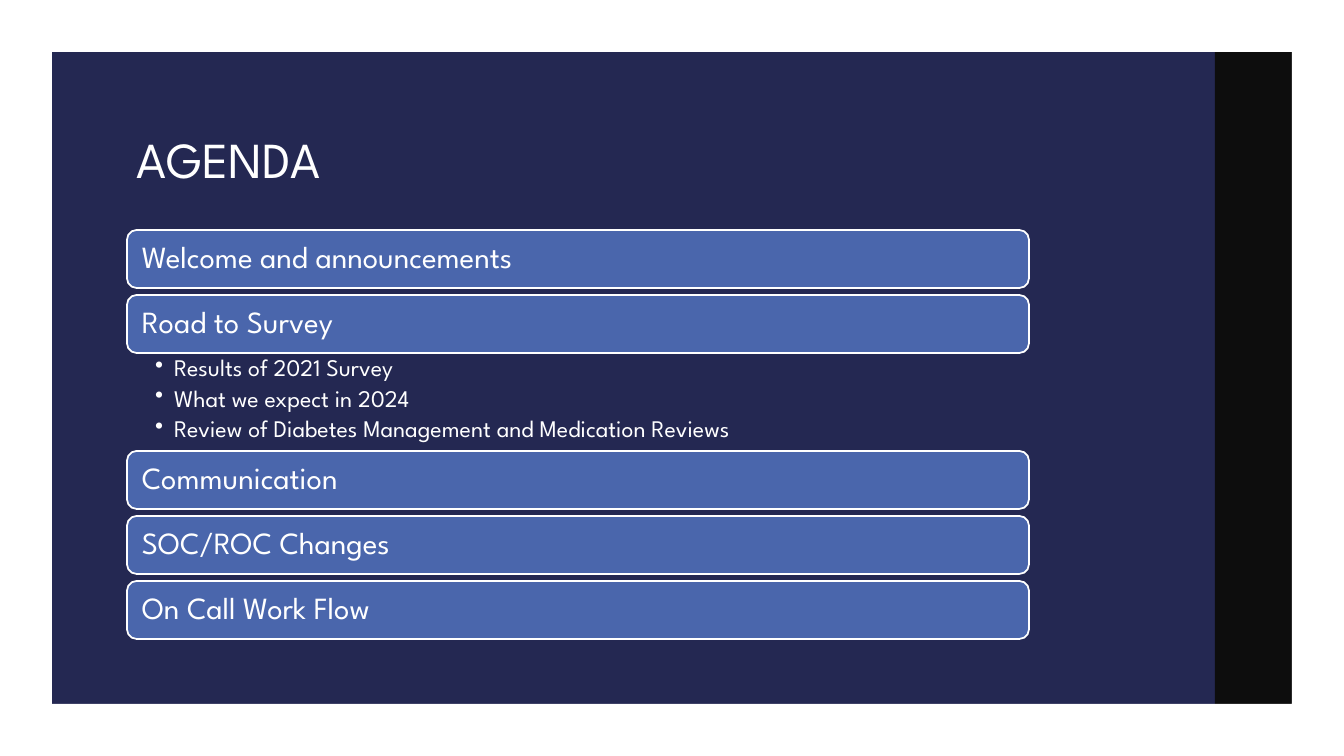
from lxml.etree import SubElement
from pptx import Presentation
from pptx.dml.color import RGBColor
from pptx.enum.shapes import MSO_SHAPE as Preset
from pptx.enum.text import MSO_ANCHOR as Anchor, MSO_AUTO_SIZE as AutoSize, PP_ALIGN as Align
from pptx.oxml.ns import qn
from pptx.util import Pt

EMU_PER_PX = 914400 / 100.8
COLORS = {"navy": "242852", "black": "0D0D0D", "white": "FFFFFF", "blue": "4A66AC"}
FONT = "League Spartan"
SLIDE_W, SLIDE_H = 1344, 756
BORDER = 52
LIST_LEFT, LIST_TOP, LIST_W = 127, 230, 902
BAR_H, BAR_GAP, DETAILS_H = 58, 7, 98
BULLET_INDENT = 19

AGENDA = [
    ("Welcome and announcements", []),
    ("Road to Survey", [
        "Results of 2021 Survey",
        "What we expect in 2024",
        "Review of Diabetes Management and Medication Reviews",
    ]),
    ("Communication", []),
    ("SOC/ROC Changes", []),
    ("On Call Work Flow", []),
]


def px(length):
    return round(length * EMU_PER_PX)


def color(name):
    return RGBColor.from_string(COLORS[name])


def apply(target, settings):
    for name, value in settings.items():
        setattr(target, name, value)


def set_frame(frame, anchor, left, top, right, bottom):
    apply(frame, {
        "word_wrap": True,
        "auto_size": AutoSize.NONE,
        "vertical_anchor": anchor,
        "margin_left": px(left),
        "margin_top": px(top),
        "margin_right": px(right),
        "margin_bottom": px(bottom),
    })


def write(paragraph, text, size, spacing=0.9, before=0):
    paragraph.text = text
    apply(paragraph, {"alignment": Align.LEFT, "line_spacing": spacing, "space_before": Pt(before)})
    apply(paragraph.font, {"name": FONT, "size": Pt(size)})
    paragraph.font.color.rgb = color("white")


def paint(shape, fill):
    shape.shadow.inherit = False
    shape.fill.solid()
    shape.fill.fore_color.rgb = color(fill)
    shape.line.fill.background()


def add_panel(slide, box, fill, preset=Preset.RECTANGLE):
    panel = slide.shapes.add_shape(preset, *map(px, box))
    paint(panel, fill)
    return panel


def add_border(slide):
    right, bottom = SLIDE_W - BORDER, SLIDE_H - BORDER
    outline = slide.shapes.build_freeform(0, 0, scale=EMU_PER_PX)
    outline.add_line_segments([(0, SLIDE_H), (SLIDE_W, SLIDE_H), (SLIDE_W, 0)])
    outline.move_to(right, bottom)
    outline.add_line_segments([(BORDER, bottom), (BORDER, BORDER), (right, BORDER)])
    paint(outline.convert_to_shape(), "white")


def add_title(slide, text):
    title = slide.shapes.title
    title.element.getparent().append(title.element)
    apply(title, {"left": px(LIST_LEFT), "top": px(95), "width": px(966), "height": px(99)})
    set_frame(title.text_frame, Anchor.BOTTOM, 10, 5, 10, 5)
    write(title.text_frame.paragraphs[0], text, 36, spacing=1.0)


def add_bar(slide, top, text):
    bar = add_panel(slide, (LIST_LEFT, top, LIST_W, BAR_H), "blue", Preset.ROUNDED_RECTANGLE)
    bar.line.color.rgb = color("white")
    bar.line.width = Pt(1.25)
    set_frame(bar.text_frame, Anchor.MIDDLE, 12, 9, 12, 9)
    write(bar.text_frame.paragraphs[0], text, 22)


def add_bullet(paragraph):
    properties = paragraph._p.get_or_add_pPr()
    properties.set("marL", str(px(BULLET_INDENT)))
    properties.set("indent", str(-px(BULLET_INDENT)))
    bullet_color = SubElement(properties, qn("a:buClr"))
    SubElement(bullet_color, qn("a:srgbClr")).set("val", COLORS["white"])
    SubElement(properties, qn("a:buChar")).set("char", "•")


def add_details(slide, top, lines):
    box = slide.shapes.add_textbox(*map(px, (LIST_LEFT, top, LIST_W, DETAILS_H)))
    frame = box.text_frame
    set_frame(frame, Anchor.TOP, 28, 3, 17, 3)
    for index, line in enumerate(lines):
        paragraph = frame.add_paragraph() if index else frame.paragraphs[0]
        add_bullet(paragraph)
        paragraph.level = 1
        write(paragraph, line, 17, before=3.4 if index else 0)


def add_agenda(slide):
    top = LIST_TOP
    for heading, details in AGENDA:
        add_bar(slide, top, heading)
        top += BAR_H
        if details:
            add_details(slide, top, details)
        top += DETAILS_H if details else BAR_GAP


def main():
    deck = Presentation()
    apply(deck, {"slide_width": px(SLIDE_W), "slide_height": px(SLIDE_H)})
    slide = deck.slides.add_slide(deck.slide_layouts[5])
    add_panel(slide, (0, 0, SLIDE_W, SLIDE_H), "navy")
    add_panel(slide, (1215, BORDER, 77, SLIDE_H - 2 * BORDER), "black")
    add_border(slide)
    add_title(slide, "AGENDA")
    add_agenda(slide)
    deck.save("out.pptx")


if __name__ == "__main__":
    main()
